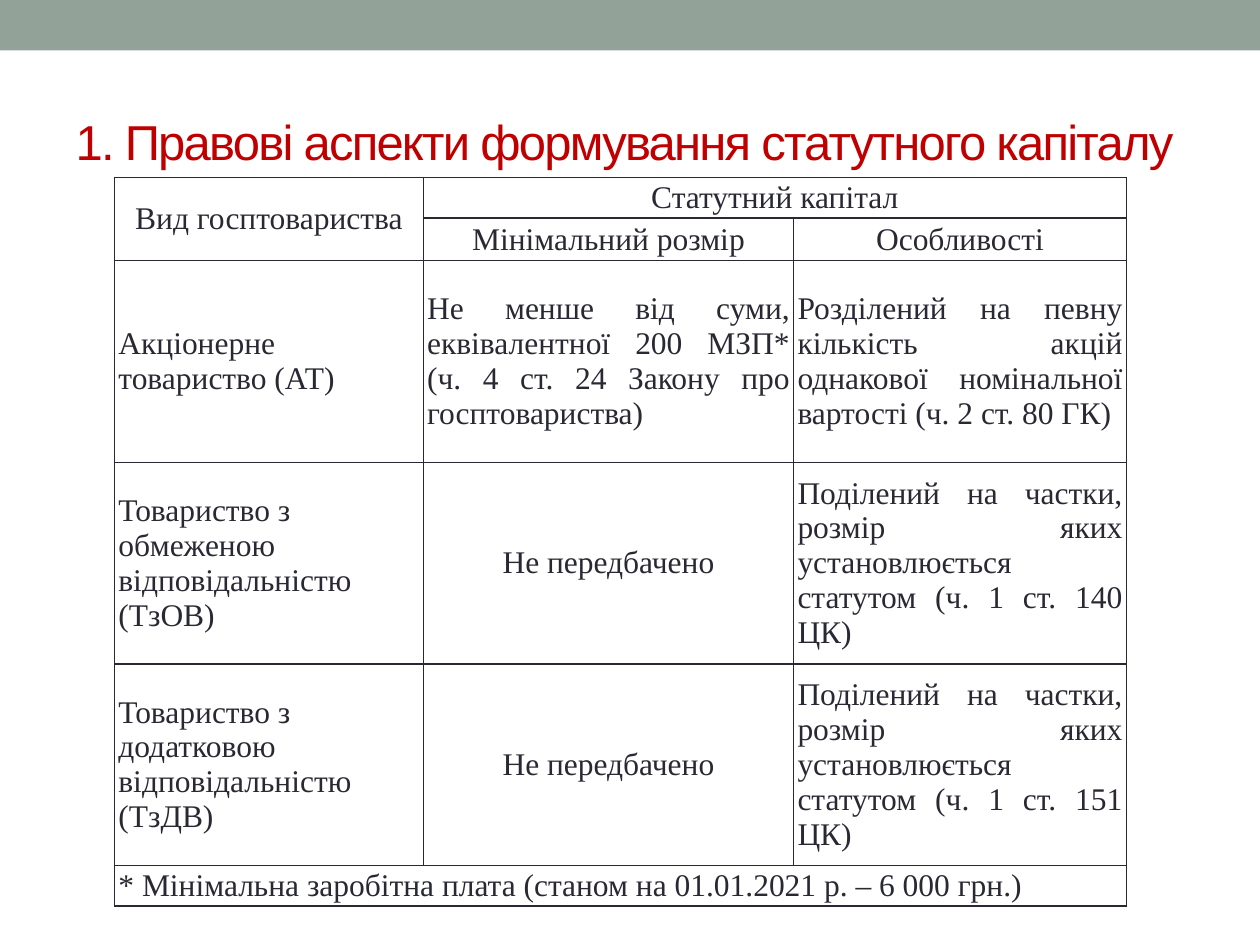
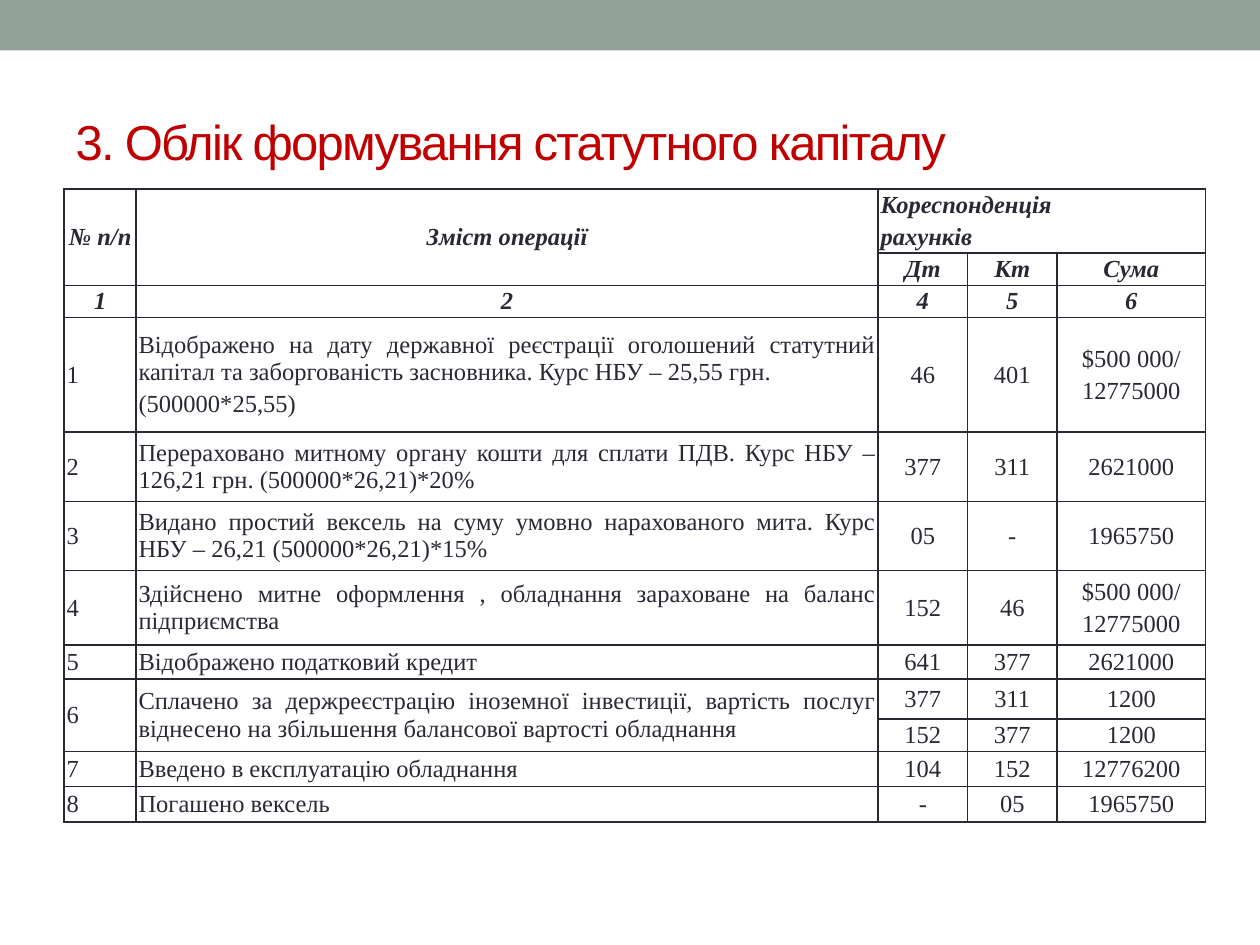
"""Build two slides on forming and recording share capital."""
from dataclasses import dataclass
from typing import NamedTuple

from lxml import etree
from pptx import Presentation
from pptx import util as u
from pptx.dml.color import RGBColor
from pptx.enum import shapes, text
from pptx.oxml import ns
from pptx.slide import Slide


@dataclass(frozen=True)
class Theme:
    band: RGBColor = RGBColor(0x93, 0xA2, 0x99)
    title: RGBColor = RGBColor(0xC0, 0x00, 0x00)
    ink: RGBColor = RGBColor(0x29, 0x29, 0x34)
    title_font: str = "Arial"
    table_font: str = "Times New Roman"
    title_size: int = 28
    border: int = 1


class Row(NamedTuple):
    height: float
    aligns: str
    cells: tuple[str, ...]
    heading: bool = False


class Merge(NamedTuple):
    row: int
    col: int
    last_row: int
    last_col: int


@dataclass(frozen=True)
class TableSpec:
    left: float
    top: float
    widths: tuple[float, ...]
    rows: tuple[Row, ...]
    merges: tuple[Merge, ...]
    size: int
    margin_x: float
    margin_y: float = 0
    gap: float = 0


THEME = Theme()
ALIGN = {"l": text.PP_ALIGN.LEFT, "c": text.PP_ALIGN.CENTER, "j": text.PP_ALIGN.JUSTIFY}

LEGAL = TableSpec(
    left=0.91, top=1.41, widths=(2.45, 2.94, 2.64), size=18, margin_x=0.03,
    rows=(
        Row(0.32, "ccc", ("Вид госптовариства", "Статутний капітал", "")),
        Row(0.34, "ccc", ("", "Мінімальний розмір", "Особливості")),
        Row(1.6, "ljj", (
            "Акціонерне товариство (АТ)",
            "Не менше від суми, еквівалентної 200 МЗП* (ч. 4 ст. 24 Закону про госптовариства)",
            "Розділений на певну кількість акцій однакової номінальної вартості (ч. 2 ст. 80 ГК)")),
        Row(1.6, "lcj", (
            "Товариство з обмеженою відповідальністю\n(ТзОВ)", "Не передбачено",
            "Поділений на частки, розмір яких установлюється статутом (ч. 1 ст. 140 ЦК)")),
        Row(1.6, "lcj", (
            "Товариство з додатковою відповідальністю\n(ТзДВ)", "Не передбачено",
            "Поділений на частки, розмір яких установлюється статутом (ч. 1 ст. 151 ЦК)")),
        Row(0.32, "jjj", (
            "* Мінімальна заробітна плата (станом на 01.01.2021 р. – 6 000 грн.)", "", "")),
    ),
    merges=(Merge(0, 0, 1, 0), Merge(0, 1, 0, 2), Merge(5, 0, 5, 2)),
)

ENTRY = "jjccc"
LEDGER = TableSpec(
    left=0.51, top=1.5, widths=(0.57, 5.89, 0.71, 0.71, 1.18), size=14,
    margin_x=0.02, margin_y=0.02, gap=2.8,
    rows=(
        Row(0.51, "cclll", ("№ п/п", "Зміст операції", "Кореспонденція\nрахунків", "", ""), True),
        Row(0.25, "ccccc", ("", "", "Дт", "Кт", "Сума"), True),
        Row(0.25, "ccccc", ("1", "2", "4", "5", "6"), True),
        Row(0.91, ENTRY, (
            "1", "Відображено на дату державної реєстрації оголошений статутний капітал "
            "та заборгованість засновника. Курс НБУ – 25,55 грн.\n(500000*25,55)",
            "46", "401", "$500 000/\n12775000")),
        Row(0.55, ENTRY, (
            "2", "Перераховано митному органу кошти для сплати ПДВ. "
            "Курс НБУ – 126,21 грн. (500000*26,21)*20%", "377", "311", "2621000")),
        Row(0.55, ENTRY, (
            "3", "Видано простий вексель на суму умовно нарахованого мита. "
            "Курс НБУ – 26,21 (500000*26,21)*15%", "05", "-", "1965750")),
        Row(0.59, ENTRY, (
            "4", "Здійснено митне оформлення , обладнання зараховане на баланс підприємства",
            "152", "46", "$500 000/\n12775000")),
        Row(0.27, ENTRY, ("5", "Відображено податковий кредит", "641", "377", "2621000")),
        Row(0.32, ENTRY, (
            "6", "Сплачено за держреєстрацію іноземної інвестиції, вартість послуг "
            "віднесено на збільшення балансової вартості обладнання", "377", "311", "1200")),
        Row(0.25, ENTRY, ("", "", "152", "377", "1200")),
        Row(0.28, ENTRY, ("7", "Введено в експлуатацію обладнання", "104", "152", "12776200")),
        Row(0.28, ENTRY, ("8", "Погашено вексель", "-", "05", "1965750")),
    ),
    merges=(Merge(0, 0, 1, 0), Merge(0, 1, 1, 1), Merge(0, 2, 0, 4),
            Merge(8, 0, 9, 0), Merge(8, 1, 9, 1)),
)


def add_master_band(prs, s: Slide) -> None:
    """Draw the top band and move it to the slide master."""
    band = s.shapes.add_shape(shapes.MSO_SHAPE.RECTANGLE, 0, 0, prs.slide_width, u.Inches(0.4))
    band.shadow.inherit = False
    band.fill.solid()
    band.fill.fore_color.rgb = THEME.band
    band.line.fill.background()
    band.element.nvSpPr.cNvPr.set("id", "20")
    prs.slide_master.element.cSld.spTree.insert(2, band.element)


def set_title(s: Slide, title: str) -> None:
    """Fill and format the title placeholder."""
    sp = s.shapes.title
    sp.left, sp.top, sp.width, sp.height = map(u.Inches, (0.5, 0.58, 9, 1.08))
    tf = sp.text_frame
    tf.word_wrap = True
    tf.auto_size = text.MSO_AUTO_SIZE.NONE
    tf.vertical_anchor = text.MSO_ANCHOR.MIDDLE
    p = tf.paragraphs[0]
    p.alignment = text.PP_ALIGN.LEFT
    r = p.add_run()
    r.text = title
    r.font.name = THEME.title_font
    r.font.size = u.Pt(THEME.title_size)
    r.font.color.rgb = THEME.title
    r.font._element.set("spc", "-100")


def style_cell(cell, spec: TableSpec) -> None:
    """Set the margins, anchor, clear fill and four borders of a cell."""
    cell.margin_left = cell.margin_right = u.Inches(spec.margin_x)
    cell.margin_top = cell.margin_bottom = u.Inches(spec.margin_y)
    cell.vertical_anchor = text.MSO_ANCHOR.MIDDLE
    cell.fill.background()
    tc_pr = cell._tc.get_or_add_tcPr()
    for i, side in enumerate(("lnL", "lnR", "lnT", "lnB")):
        ln = etree.Element(ns.qn(f"a:{side}"), w=str(u.Pt(THEME.border)))
        fill = etree.SubElement(ln, ns.qn("a:solidFill"))
        etree.SubElement(fill, ns.qn("a:srgbClr"), val=str(THEME.ink))
        tc_pr.insert(i, ln)


def write_cell(cell, content: str, align: str, heading: bool, spec: TableSpec) -> None:
    """Write one paragraph for each line of the content."""
    tf = cell.text_frame
    for i, line in enumerate(content.split("\n")):
        p = tf.add_paragraph() if i else tf.paragraphs[0]
        p.alignment = ALIGN[align]
        if i and spec.gap:
            p.space_before = u.Pt(spec.gap)
        p.font.size = u.Pt(spec.size)
        if line:
            r = p.add_run()
            r.text = line
            r.font.name = THEME.table_font
            r.font.size = u.Pt(spec.size)
            r.font.color.rgb = THEME.ink
            r.font.bold = r.font.italic = heading


def add_grid(s: Slide, spec: TableSpec) -> None:
    """Add a bordered table."""
    size = sum(spec.widths), sum(row.height for row in spec.rows)
    table = s.shapes.add_table(
        len(spec.rows), len(spec.widths),
        *map(u.Inches, (spec.left, spec.top, *size))).table
    table.first_row = table.horz_banding = False
    for col, width in zip(table.columns, spec.widths):
        col.width = u.Inches(width)
    for i, row in enumerate(spec.rows):
        table.rows[i].height = u.Inches(row.height)
        for j, (content, align) in enumerate(zip(row.cells, row.aligns)):
            cell = table.cell(i, j)
            style_cell(cell, spec)
            write_cell(cell, content, align, row.heading, spec)
    for m in spec.merges:
        table.cell(m.row, m.col).merge(table.cell(m.last_row, m.last_col))


def main() -> None:
    """Build and save the presentation."""
    prs = Presentation()
    prs.slide_width, prs.slide_height = u.Inches(10), u.Inches(7.5)
    pages = (
        ("1. Правові аспекти формування статутного капіталу", LEGAL),
        ("3. Облік формування статутного капіталу", LEDGER),
    )
    for title, spec in pages:
        s = prs.slides.add_slide(prs.slide_layouts[5])
        set_title(s, title)
        add_grid(s, spec)
    add_master_band(prs, prs.slides[0])
    prs.save("out.pptx")


if __name__ == "__main__":
    main()
